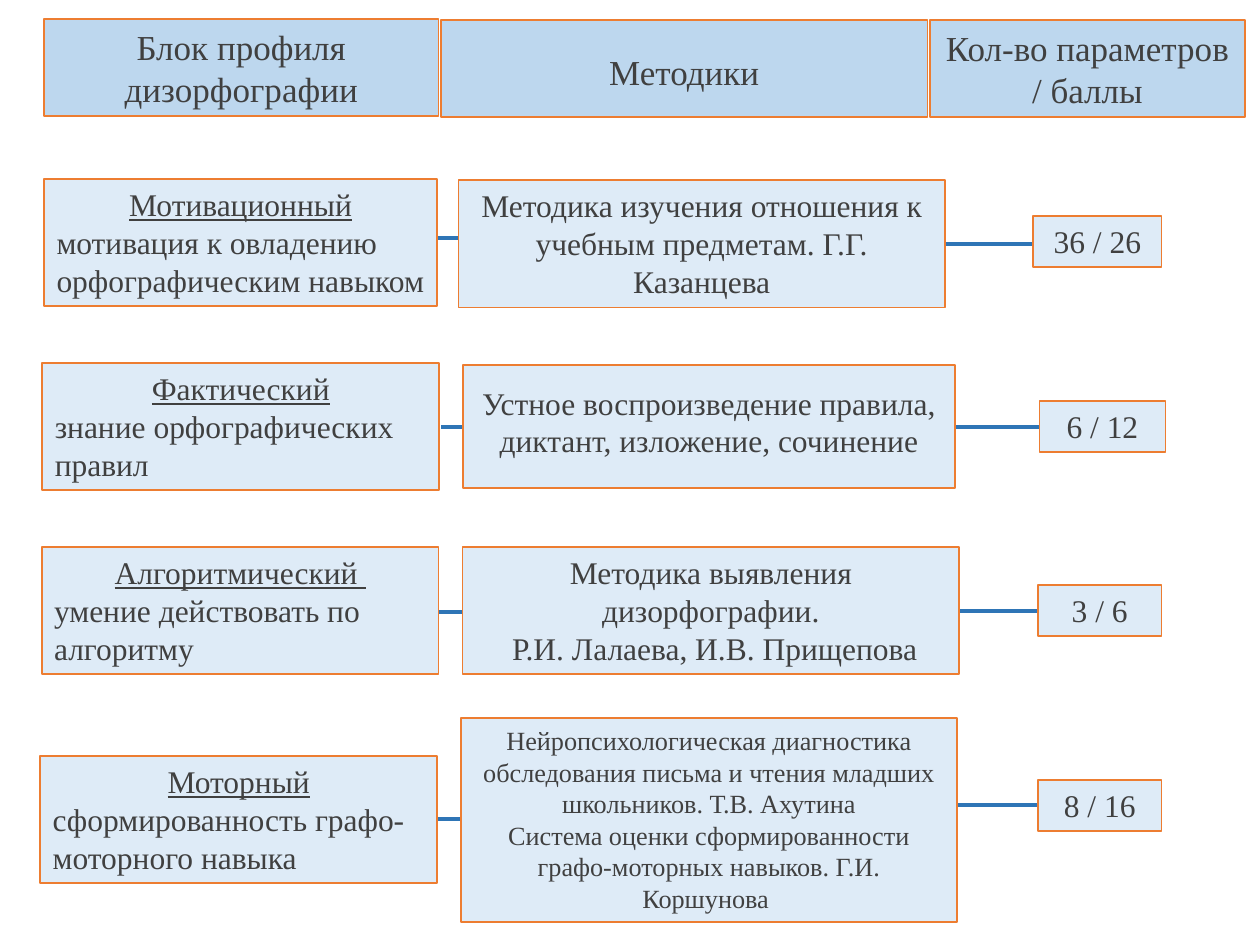
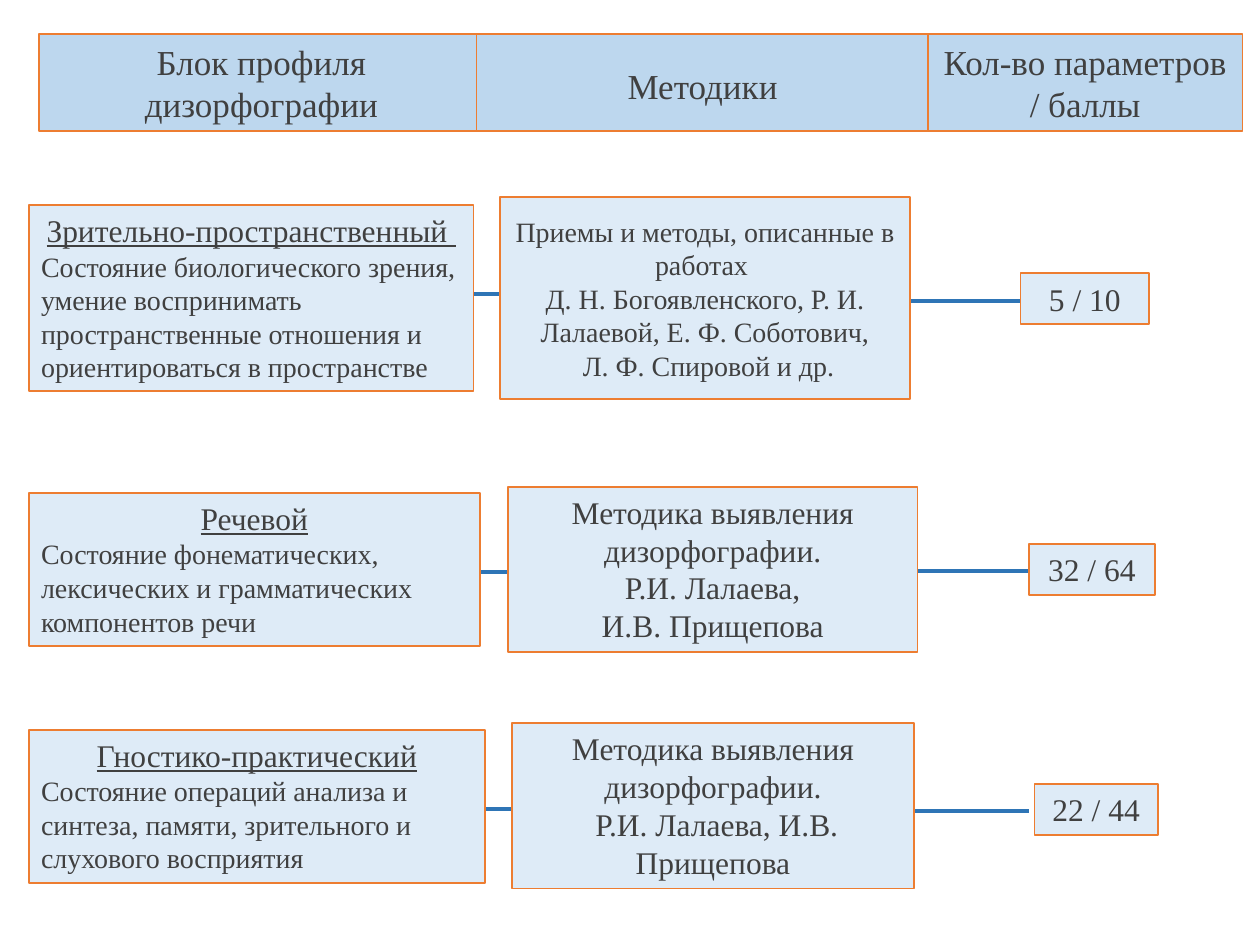
from pptx import Presentation, util as u
from pptx.dml.color import RGBColor
from pptx.enum import shapes, text
from dataclasses import dataclass
from lxml import etree


@dataclass(frozen=True)
class Theme:
    header_fill: str = "BDD7EE"
    body_fill: str = "DEEBF7"
    border: str = "ED7D31"
    link: str = "2E75B6"
    ink: str = "404040"
    font: str = "Times New Roman"
    header_size: int = 20
    body_size: int = 18
    border_width: float = 1
    link_width: float = 2.25


THEME = Theme()
CENTER, LEFT = text.PP_ALIGN.CENTER, text.PP_ALIGN.LEFT

HEADINGS = ["Блок профиля дизорфографии", "Методики", "Кол-во параметров / баллы"]
HEADING_LEADS = [0, 14, 0]  # extra space above the text
HEADING_HEIGHT = 55.4
SCORE_HEIGHT = 29.1
LINK_LENGTH = 68.2

# Places are (left, top, width, height) in points; link starts are (x, y).
# Headings and scores have fixed heights, so theirs are (left, top, width).
SLIDES = [
    {
        "headings": [(25.2, 10.8, 225.4), (252, 11.5, 278), (531.4, 11.5, 180)],
        "detail_size": 18,
        "rows": [
            {
                "block": ("Мотивационный", "мотивация к овладению орфографическим навыком"),
                "methods": ["Методика изучения отношения к учебным предметам. Г.Г. Казанцева"],
                "score": "36 / 26",
                "block_at": (25.2, 102.2, 224.6, 72.7),
                "methods_at": (262.1, 103, 277.9, 72.7),
                "score_at": (590.4, 123.6, 73.4),
                "links": [(249.8, 136.1), (540, 139.7)],
            },
            {
                "block": ("Фактический", "знание орфографических правил"),
                "methods": ["Устное воспроизведение правила, диктант, изложение, сочинение"],
                "score": "6 / 12",
                "block_at": (24.2, 207.4, 226.8, 72.7),
                "methods_at": (264.4, 208.6, 281.5, 70.4),
                "score_at": (594, 229, 72),
                "links": [(252, 244.1), (542.2, 244.1)],
                "lead": 7,
            },
            {
                "block": ("Алгоритмический ", "умение действовать по алгоритму"),
                "methods": ["Методика выявления дизорфографии.", " Р.И. Лалаева, И.В. Прищепова"],
                "score": "3 / 6",
                "block_at": (23.8, 312.5, 226.8, 72.7),
                "methods_at": (264.4, 312.5, 283.7, 72.7),
                "score_at": (593.1, 334.3, 70.6),
                "links": [(250.6, 349.9), (545.8, 349.2)],
            },
            {
                "block": ("Моторный", "сформированность графо-моторного навыка"),
                "methods": [
                    "Нейропсихологическая диагностика обследования письма и\u00a0чтения\u00a0младших "
                    "школьников. Т.В. Ахутина",
                    "Система оценки сформированности графо-моторных навыков. Г.И. Коршунова ",
                ],
                "score": "8 / 16",
                "block_at": (23, 432, 226.8, 72.7),
                "methods_at": (263.3, 410.4, 283.7, 116.4),
                "score_at": (593.1, 445.7, 70.6),
                "links": [(249.8, 468), (547.2, 460.1)],
                "methods_size": 15,
            },
        ],
    },
    {
        "headings": [(22.3, 19.6, 254.2), (272.2, 19.4, 258.5), (530.1, 19.6, 180)],
        "detail_size": 16,
        "rows": [
            {
                "block": (
                    "Зрительно-пространственный ",
                    "Состояние биологического зрения, умение воспринимать пространственные "
                    "отношения и ориентироваться в пространстве",
                ),
                "methods": [
                    "Приемы и методы, описанные в работах ",
                    "Д. Н. Богоявленского, Р. И. Лалаевой, Е. Ф. Соботович,",
                    " Л. Ф. Спировой и др.",
                ],
                "score": "5 / 10",
                "block_at": (16.4, 117.2, 254.2, 106.4),
                "methods_at": (285.8, 112.8, 234.2, 115.2),
                "score_at": (583.2, 156.2, 73.4),
                "links": [(244.8, 167.8), (519.8, 172.1)],
                "methods_size": 16,
                "lead": 6,
            },
            {
                "block": ("Речевой", "Состояние фонематических, лексических и грамматических компонентов речи"),
                "methods": ["Методика выявления дизорфографии.", " Р.И. Лалаева, ", "И.В. Прищепова"],
                "score": "32 / 64",
                "block_at": (16.4, 281.7, 257.8, 87.4),
                "methods_at": (290.2, 278.1, 234.2, 94.5),
                "score_at": (588, 311, 72),
                "links": [(252, 326.9), (519.8, 326.2)],
            },
            {
                "block": (
                    "Гностико-практический",
                    "Состояние операций анализа и синтеза, памяти, зрительного и слухового восприятия",
                ),
                "methods": ["Методика выявления дизорфографии.", " Р.И. Лалаева, И.В. Прищепова"],
                "score": "22 / 44",
                "block_at": (16.4, 417, 260.8, 87.4),
                "methods_at": (292.5, 413.3, 229.9, 94.5),
                "score_at": (591.2, 447.9, 70.4),
                "links": [(250.6, 462.2), (519.8, 463.7)],
            },
        ],
    },
]


def apply_format(target, values):
    for name, value in values.items():
        setattr(target, name, value)


def add_box(slide, place, lines, fill, lead=0):
    """Draw a bordered box; each line is (wording, size, alignment, underline)."""
    box = slide.shapes.add_shape(shapes.MSO_SHAPE.RECTANGLE, *map(u.Pt, place))
    box.shadow.inherit = False
    box.fill.solid()
    box.fill.fore_color.rgb = RGBColor.from_string(fill)
    box.line.color.rgb = RGBColor.from_string(THEME.border)
    box.line.width = u.Pt(THEME.border_width)
    frame = box.text_frame
    apply_format(frame, {
        "word_wrap": True,
        "vertical_anchor": text.MSO_ANCHOR.TOP,
        "margin_top": u.Pt(3.6 + lead),
    })
    for index, (wording, size, alignment, underline) in enumerate(lines):
        paragraph = frame.add_paragraph() if index else frame.paragraphs[0]
        paragraph.alignment = alignment
        run = paragraph.add_run()
        run.text = wording
        apply_format(run.font, {"name": THEME.font, "size": u.Pt(size), "underline": underline})
        run.font.color.rgb = RGBColor.from_string(THEME.ink)


def add_link(slide, x, y):
    link = slide.shapes.add_connector(
        shapes.MSO_CONNECTOR.STRAIGHT, u.Pt(x), u.Pt(y), u.Pt(x + LINK_LENGTH), u.Pt(y))
    link.line.color.rgb = RGBColor.from_string(THEME.link)
    link.line.width = u.Pt(THEME.link_width)
    properties = link.line._get_or_add_ln().getparent()
    namespace = etree.QName(properties[0]).namespace
    etree.SubElement(properties, f"{{{namespace}}}effectLst")


def add_row(slide, row, detail_size):
    title, detail = row["block"]
    body = THEME.body_size
    add_box(slide, row["block_at"],
            [(title, body, CENTER, True), (detail, detail_size, LEFT, False)], THEME.body_fill)
    methods_size = row.get("methods_size", body)
    add_box(slide, row["methods_at"],
            [(method, methods_size, CENTER, False) for method in row["methods"]],
            THEME.body_fill, row.get("lead", 0))
    add_box(slide, (*row["score_at"], SCORE_HEIGHT),
            [(row["score"], body, CENTER, False)], THEME.body_fill)


def main():
    deck = Presentation()
    deck.slide_width, deck.slide_height = u.Pt(720), u.Pt(540)
    for content in SLIDES:
        slide = deck.slides.add_slide(deck.slide_layouts[6])
        for row in content["rows"]:
            for start in row["links"]:
                add_link(slide, *start)
        for heading, place, lead in zip(HEADINGS, content["headings"], HEADING_LEADS):
            add_box(slide, (*place, HEADING_HEIGHT),
                    [(heading, THEME.header_size, CENTER, False)], THEME.header_fill, lead)
        for row in content["rows"]:
            add_row(slide, row, content["detail_size"])
    deck.save("out.pptx")


if __name__ == "__main__":
    main()
